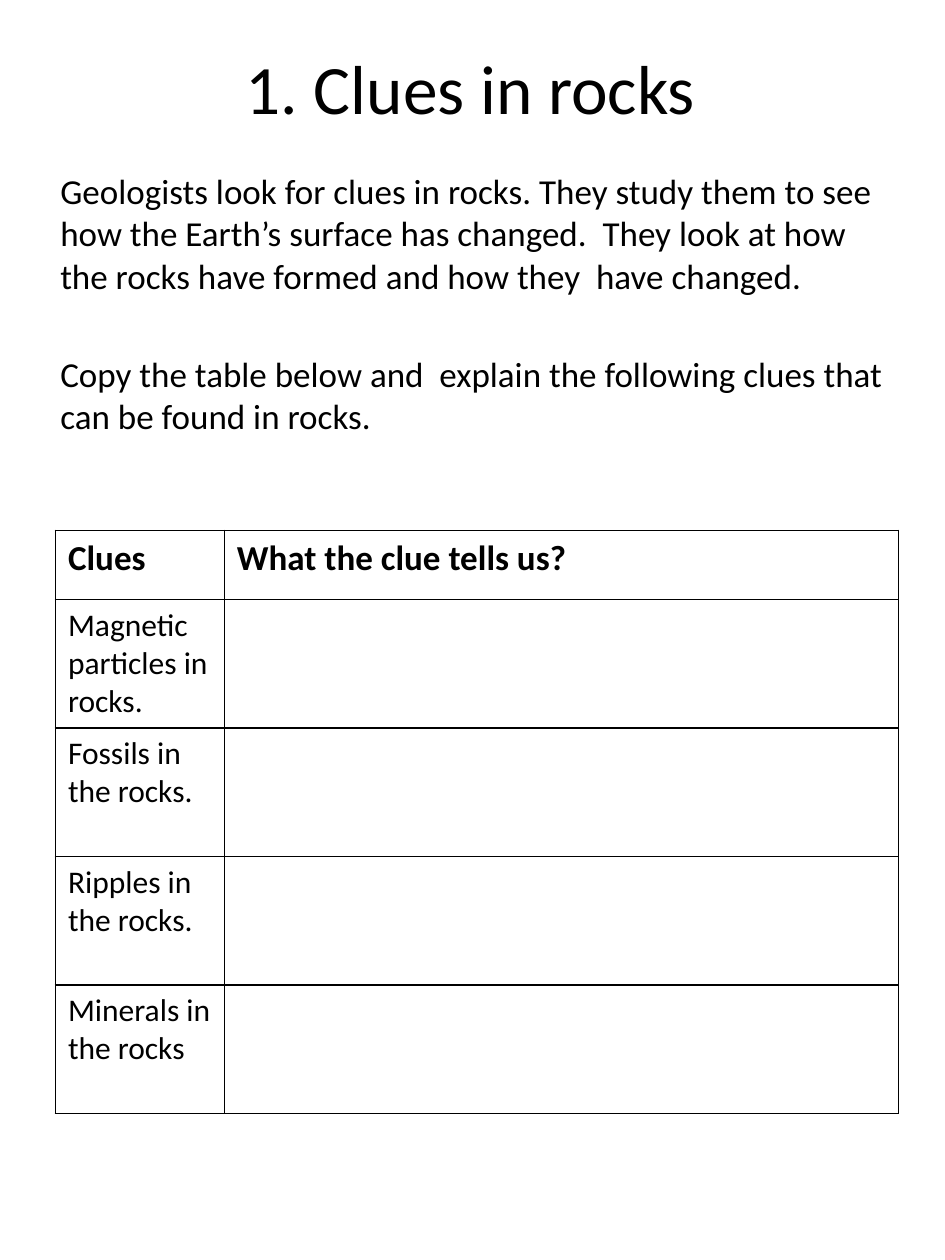
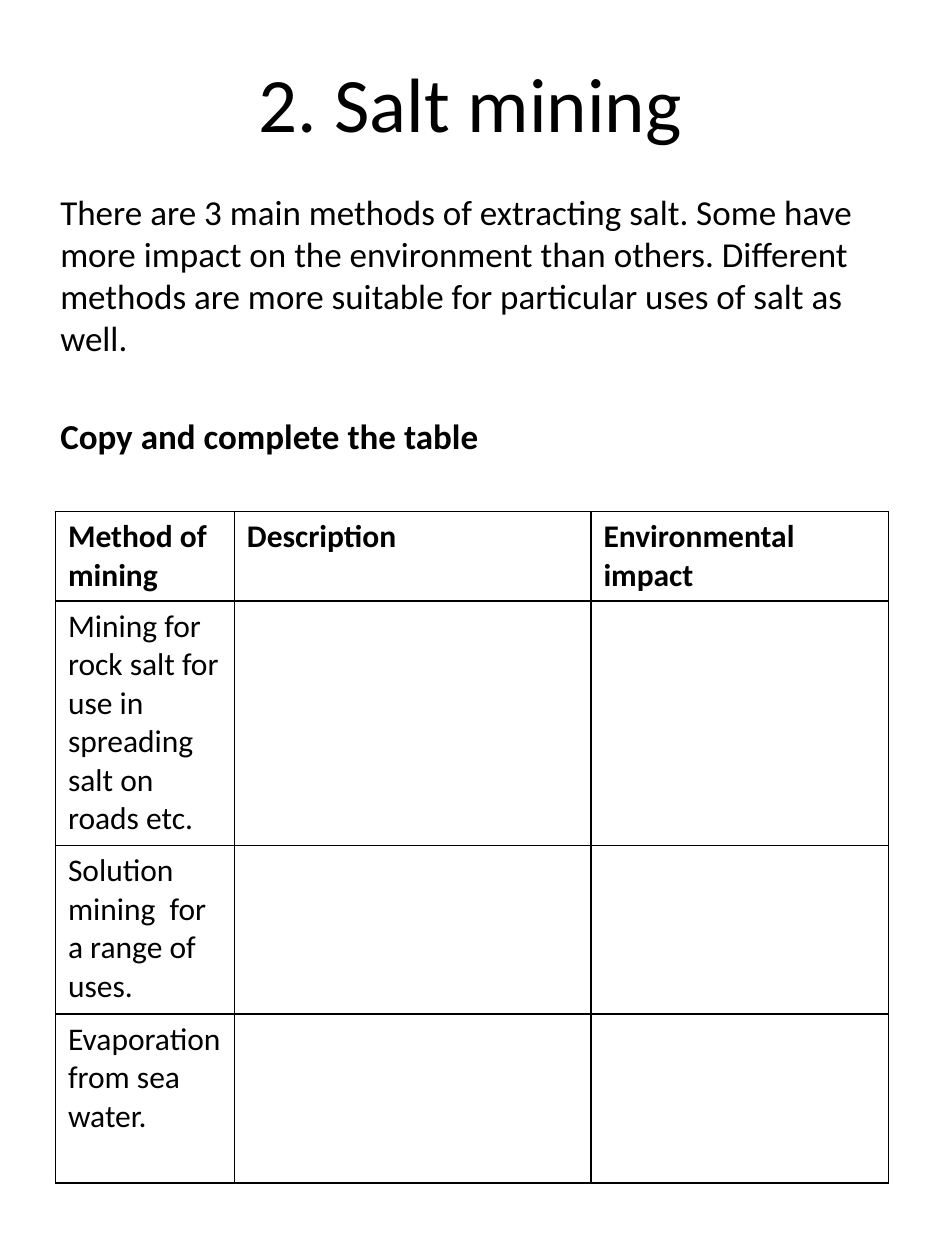
from dataclasses import dataclass

from lxml.etree import SubElement
from pptx import Presentation
from pptx.dml.color import RGBColor
from pptx.enum.text import MSO_ANCHOR, PP_ALIGN
from pptx.oxml.ns import qn
from pptx.util import Inches, Pt


@dataclass(frozen=True)
class Theme:
    font: str = "Calibri"
    ink: str = "000000"
    body_size: float = 20
    cell_size: float = 18
    paragraph_gap: float = 32
    border_width: float = 1


theme = Theme()

worksheets = [
    {
        "title": "1. Clues in rocks",
        "title_size": 39.6,
        "title_height": 0.82,
        "body_top": 1.3,
        "body_height": 2.6,
        "paragraphs": [
            ("Geologists look for clues in rocks. They study them to see how the Earth’s "
             "surface has changed.  They look at how the rocks have formed and how they  "
             "have changed.", False),
            ("Copy the table below and  explain the following clues that can be found "
             "in rocks.", False),
        ],
        "table_top": 4.21,
        "columns": [1.34, 5.35],
        "row_heights": [0.55] + [1.02] * 4,
        "header_size": theme.body_size,
        "headers": ["Clues", "What the clue tells us?"],
        "row_labels": [
            "Magnetic particles in rocks.",
            "Fossils in the rocks.",
            "Ripples in the rocks.",
            "Minerals in the rocks",
        ],
    },
    {
        "title": "2. Salt mining",
        "title_size": 44,
        "title_height": 1.06,
        "body_top": 1.46,
        "body_height": 2.4,
        "paragraphs": [
            ("There are 3 main methods of extracting salt. Some have more impact on the "
             "environment than others. Different methods are more suitable for particular "
             "uses of salt as well.", False),
            ("Copy and complete the table", True),
        ],
        "table_top": 4.06,
        "columns": [1.42, 2.83, 2.36],
        "row_heights": [0.71, 1.94, 1.34, 1.34],
        "header_size": theme.cell_size,
        "headers": ["Method of mining", "Description", "Environmental impact"],
        "row_labels": [
            "Mining for rock salt for use in spreading salt on roads etc.",
            "Solution mining  for a range of uses.",
            "Evaporation from sea water.",
        ],
    },
]


def add_run(paragraph, text, size, bold=False):
    run = paragraph.add_run()
    run.text = text
    run.font.name = theme.font
    run.font.size = Pt(size)
    run.font.bold = bold
    run.font.color.rgb = RGBColor.from_string(theme.ink)


def outline_cell(cell):
    """Clear the cell's fill and rule all four of its sides."""
    properties = cell._tc.get_or_add_tcPr()
    for side in ("a:lnL", "a:lnR", "a:lnT", "a:lnB"):
        line = SubElement(properties, qn(side), w=str(Pt(theme.border_width)))
        line_fill = SubElement(line, qn("a:solidFill"))
        SubElement(line_fill, qn("a:srgbClr"), val=theme.ink)
    cell.fill.background()


presentation = Presentation()
presentation.slide_width = Inches(7.5)
presentation.slide_height = Inches(10)
blank_layout = presentation.slide_layouts[6]

for worksheet in worksheets:
    slide = presentation.slides.add_slide(blank_layout)

    title_box = slide.shapes.add_textbox(
        Inches(0.36), Inches(0.28), Inches(6.75), Inches(worksheet["title_height"]))
    title_box.text_frame.word_wrap = True
    title_box.text_frame.vertical_anchor = MSO_ANCHOR.MIDDLE
    title_paragraph = title_box.text_frame.paragraphs[0]
    title_paragraph.alignment = PP_ALIGN.CENTER
    add_run(title_paragraph, worksheet["title"], worksheet["title_size"])

    body_box = slide.shapes.add_textbox(
        Inches(0.38), Inches(worksheet["body_top"]),
        Inches(6.75), Inches(worksheet["body_height"]))
    body_frame = body_box.text_frame
    body_frame.word_wrap = True
    for index, (text, bold) in enumerate(worksheet["paragraphs"]):
        if index == 0:
            paragraph = body_frame.paragraphs[0]
        else:
            paragraph = body_frame.add_paragraph()
            paragraph.space_before = Pt(theme.paragraph_gap)
        add_run(paragraph, text, theme.body_size, bold)

    columns, row_heights = worksheet["columns"], worksheet["row_heights"]
    table = slide.shapes.add_table(
        len(row_heights), len(columns), Inches(0.44), Inches(worksheet["table_top"]),
        Inches(sum(columns)), Inches(sum(row_heights))).table
    table.horz_banding = False
    for column, width in zip(table.columns, columns):
        column.width = Inches(width)
    for row, height in zip(table.rows, row_heights):
        row.height = Inches(height)
    for cell in table.iter_cells():
        outline_cell(cell)

    for index, header in enumerate(worksheet["headers"]):
        paragraph = table.cell(0, index).text_frame.paragraphs[0]
        add_run(paragraph, header, worksheet["header_size"], bold=True)
    for index, label in enumerate(worksheet["row_labels"], start=1):
        paragraph = table.cell(index, 0).text_frame.paragraphs[0]
        add_run(paragraph, label, theme.cell_size)

presentation.save("out.pptx")
